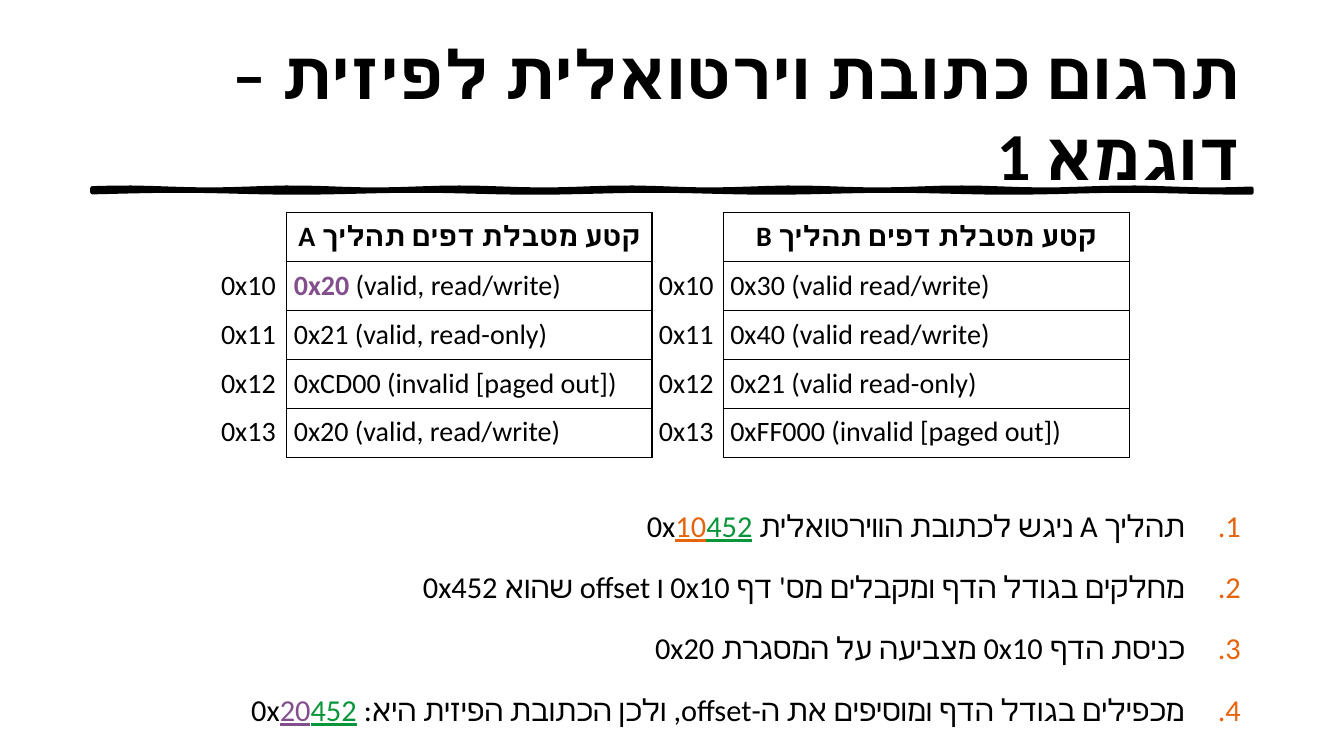
from dataclasses import dataclass
from math import sin

from lxml.etree import SubElement
from pptx import Presentation
from pptx.dml.color import RGBColor as Rgb
from pptx.enum.text import MSO_ANCHOR as Anchor, MSO_AUTO_SIZE as AutoSize, PP_ALIGN as Align
from pptx.oxml.ns import qn
from pptx.util import Pt


@dataclass(frozen=True)
class Theme:
    """Colours, font and type sizes of the slide."""
    font: str = "Calibri"
    ink: str = "000000"
    page: str = "E4650E"
    offset: str = "09963B"
    frame: str = "824F8C"
    title_size: float = 48
    table_size: float = 20
    step_size: float = 21.7


THEME = Theme()
NO_STYLE = "{2D5ABB26-0587-4C30-8999-92F81FD0307C}"
HEADING = "תרגום כתובת וירטואלית לפיזית – דוגמא 1"
PAGES = ["0x10", "0x11", "0x12", "0x13"]
PROCESS_A = [
    "קטע מטבלת דפים תהליך A",
    "0x20 (valid, read/write)",
    "0x21 (valid, read-only)",
    "0xCD00 (invalid [paged out])",
    "0x20 (valid, read/write)",
]
PROCESS_B = [
    "קטע מטבלת דפים תהליך B",
    "0x30 (valid read/write)",
    "0x40 (valid read/write)",
    "0x21 (valid read-only)",
    "0xFF000 (invalid [paged out])",
]
STEPS = [
    [("תהליך A ניגש לכתובת הווירטואלית 0x", None), ("10", THEME.page), ("452", THEME.offset)],
    [("מחלקים בגודל הדף ומקבלים מס' דף 0x10 ו offset שהוא 0x452", None)],
    [("כניסת הדף 0x10 מצביעה על המסגרת 0x20", None)],
    [("מכפילים בגודל הדף ומוסיפים את ה-offset, ולכן הכתובת הפיזית היא: 0x", None),
     ("20", THEME.frame), ("452", THEME.offset)],
]


def write(paragraph, text, size, color=THEME.ink, bold=False, underline=False):
    """Append one formatted run to a paragraph."""
    run = paragraph.add_run()
    run.text = text
    font = run.font
    font.size, font.bold, font.underline = Pt(size), bold, underline
    font.color.rgb = Rgb.from_string(color)
    font.name = THEME.font
    SubElement(run._r.get_or_add_rPr(), qn("a:cs"), typeface=THEME.font)


def set_rtl(paragraph, align):
    """Make a paragraph run from right to left and return its properties."""
    paragraph.alignment = align
    properties = paragraph._p.get_or_add_pPr()
    properties.set("rtl", "1")
    return properties


def place(shape, left, top, width, height):
    """Move a placeholder to a box and return its text frame."""
    shape.left, shape.top, shape.width, shape.height = map(Pt, (left, top, width, height))
    shape.text_frame.auto_size = AutoSize.NONE
    shape.text_frame.word_wrap = True
    return shape.text_frame


def add_heading(slide, left, top, width, height):
    """Fill the title and draw the brushed rule under it."""
    frame = place(slide.shapes.title, left, top, width, height)
    frame.vertical_anchor = Anchor.MIDDLE
    set_rtl(frame.paragraphs[0], Align.RIGHT)
    write(frame.paragraphs[0], HEADING, THEME.title_size, bold=True)

    rule_top, segments = top + height + 1.5, 60
    xs = [left + width * i / segments for i in range(segments + 1)]
    upper = [(Pt(x), Pt(rule_top + 0.7 * sin(x / 19))) for x in xs]
    lower = [(Pt(x), Pt(rule_top + 2.2 + 0.7 * sin(x / 27))) for x in reversed(xs)]
    brush = slide.shapes.build_freeform(*upper[0])
    brush.add_line_segments(upper[1:] + lower, close=True)
    rule = brush.convert_to_shape()
    rule.shadow.inherit = False
    rule.fill.solid()
    rule.fill.fore_color.rgb = rule.line.color.rgb = Rgb.from_string(THEME.ink)
    rule.line.width = Pt(3)


def set_borders(cell, sides):
    """Draw the named sides of a cell and clear the others."""
    properties = cell._tc.get_or_add_tcPr()
    for position, side in enumerate("LRTB"):
        edge = properties.makeelement(qn(f"a:ln{side}"), {"w": str(Pt(1))})
        if side in sides:
            SubElement(SubElement(edge, qn("a:solidFill")), qn("a:srgbClr"), val=THEME.ink)
        else:
            SubElement(edge, qn("a:noFill"))
        properties.insert(position, edge)


def add_page_tables(slide, left, top, widths, row_height):
    """Set the page tables of both processes side by side in one grid."""
    columns = [["", *PAGES], PROCESS_A, ["", *PAGES], PROCESS_B]
    rows = len(PROCESS_A)
    table = slide.shapes.add_table(rows, len(columns), Pt(left), Pt(top),
                                   Pt(sum(widths)), Pt(row_height * rows)).table
    table.first_row = table.horz_banding = False
    table._tbl.tblPr[0].text = NO_STYLE
    for row in table.rows:
        row.height = Pt(row_height)
    for c, (entries, width) in enumerate(zip(columns, widths)):
        table.columns[c].width = Pt(width)
        for r, entry in enumerate(entries):
            cell = table.cell(r, c)
            cell.fill.background()
            cell.margin_left = cell.margin_right = cell.margin_top = cell.margin_bottom = Pt(5)
            set_borders(cell, "LRTB" if c % 2 else "LR" if c else "R")
            paragraph = cell.text_frame.paragraphs[0]
            if r == 0 and entry:
                set_rtl(paragraph, Align.CENTER)
            if (r, c) == (1, 1):
                used_frame, entry = entry[:4], entry[4:]
                write(paragraph, used_frame, THEME.table_size, color=THEME.frame, bold=True)
            if entry:
                write(paragraph, entry, THEME.table_size, bold=r == 0)


def add_steps(slide, left, top, width, height):
    """Number the translation steps from right to left."""
    frame = place(slide.placeholders[1], left, top, width, height)
    for i, step in enumerate(STEPS):
        paragraph = frame.add_paragraph() if i else frame.paragraphs[0]
        paragraph.line_spacing, paragraph.space_before = 1.3, Pt(10)
        properties = set_rtl(paragraph, Align.RIGHT)
        properties.set("marL", str(Pt(40)))
        properties.set("indent", str(-Pt(40)))
        SubElement(SubElement(properties, qn("a:buClr")), qn("a:srgbClr"), val=THEME.page)
        SubElement(properties, qn("a:buFont"), typeface="Arial")
        SubElement(properties, qn("a:buAutoNum"), type="arabicPeriod")
        for text, color in step:
            write(paragraph, text, THEME.step_size, color=color or THEME.ink, underline=bool(color))


def main():
    """Build the slide and save it."""
    deck = Presentation()
    deck.slide_width, deck.slide_height = Pt(960), Pt(540)
    slide = deck.slides.add_slide(deck.slide_layouts[1])
    add_heading(slide, 66, 28.8, 828, 104.4)
    add_steps(slide, 18.7, 350.6, 874.8, 172.8)
    add_page_tables(slide, 152.9, 151.7, [52, 260.8, 51, 290.2], 35)
    deck.save("out.pptx")


if __name__ == "__main__":
    main()
